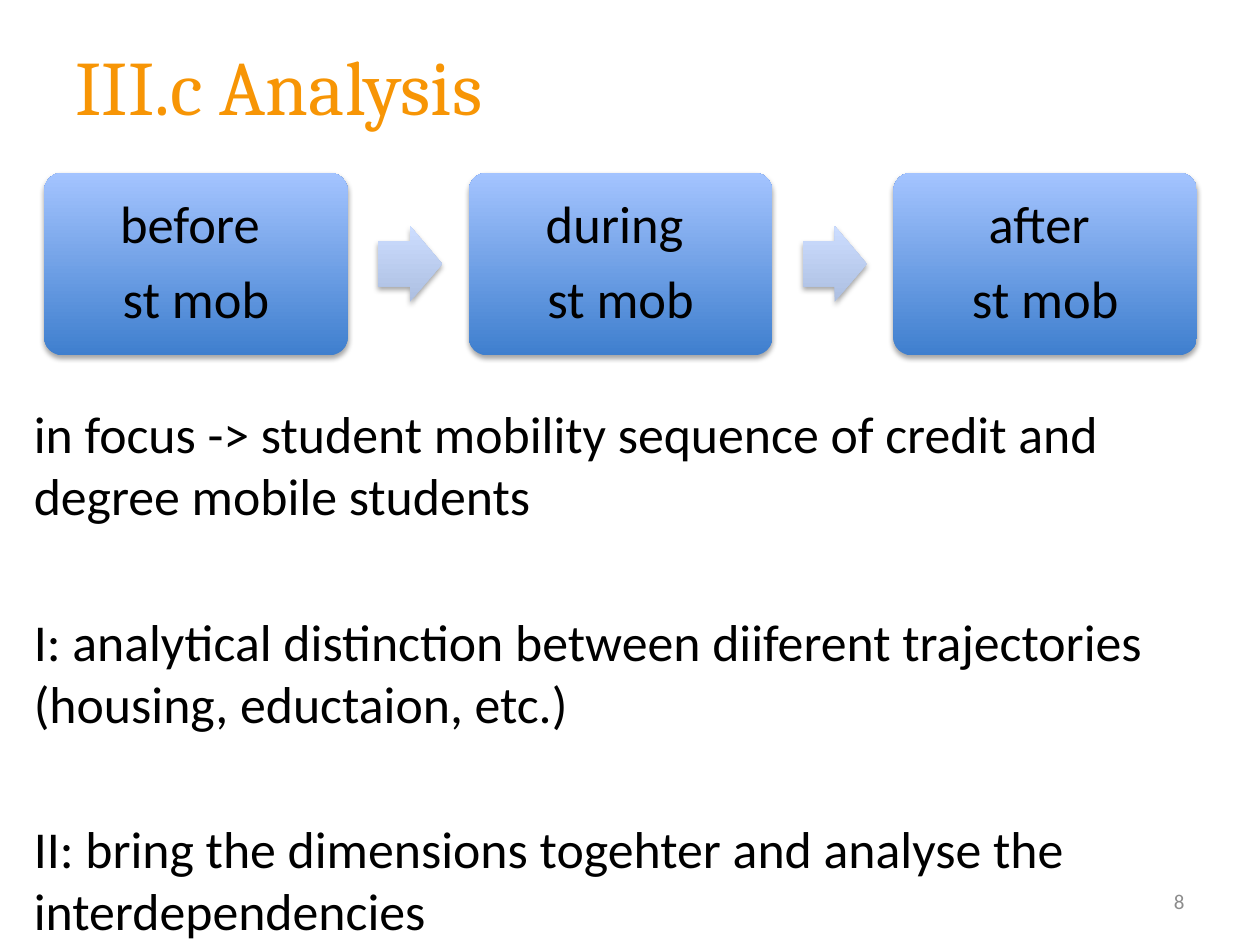
from lxml.etree import SubElement
from pptx import Presentation
from pptx.dml.color import RGBColor
from pptx.enum.shapes import MSO_SHAPE as Shape
from pptx.enum.text import MSO_ANCHOR as Anchor, PP_ALIGN as Align
from pptx.oxml.ns import qn
from pptx.util import Inches, Pt

ORANGE = RGBColor(0xF7, 0x95, 0x05)
BLACK = RGBColor(0x00, 0x00, 0x00)
GRAY = RGBColor(0x8C, 0x8C, 0x8C)
BOX_COLORS = RGBColor(0x3F, 0x7F, 0xCE), RGBColor(0xA4, 0xC4, 0xFF)
ARROW_COLORS = RGBColor(0xAD, 0xBF, 0xE1), RGBColor(0xCC, 0xDD, 0xFF)

presentation = Presentation()
presentation.slide_width = Inches(10)
presentation.slide_height = Inches(7.5)
slide = presentation.slides.add_slide(presentation.slide_layouts[6])


def add_text(paragraph, text, size, color, font_name="Calibri"):
    run = paragraph.add_run()
    run.text = text
    run.font.size = Pt(size)
    run.font.name = font_name
    run.font.color.rgb = color


def add_step_shape(kind, left, top, width, height, colors):
    shape = slide.shapes.add_shape(
        kind, Inches(left), Inches(top), Inches(width), Inches(height))
    shape.line.fill.background()
    shape.fill.gradient()
    shape.fill.gradient_angle = 90
    for stop, color in zip(shape.fill.gradient_stops, colors):
        stop.color.rgb = color
    # Soft shadow straight below
    shape.shadow.inherit = False
    effects = shape._element.spPr.find(qn("a:effectLst"))
    shadow = SubElement(effects, qn("a:outerShdw"), blurRad=str(Pt(3.1)),
                        dist=str(Pt(1.8)), dir="5400000", rotWithShape="0")
    shadow_color = SubElement(shadow, qn("a:srgbClr"), val="000000")
    SubElement(shadow_color, qn("a:alpha"), val="35000")
    return shape


# Title
title = slide.shapes.add_textbox(Inches(0.5), Inches(0.05), Inches(9.5), Inches(1.25))
title.text_frame.word_wrap = True
title.text_frame.vertical_anchor = Anchor.MIDDLE
add_text(title.text_frame.paragraphs[0], "III.c Analysis", 44, ORANGE, "Cambria")

# Slide number
number = slide.shapes.add_textbox(Inches(7.17), Inches(6.95), Inches(2.33), Inches(0.4))
number.text_frame.word_wrap = True
number.text_frame.vertical_anchor = Anchor.MIDDLE
number.text_frame.paragraphs[0].alignment = Align.RIGHT
add_text(number.text_frame.paragraphs[0], "8", 12, GRAY)

# Body statements
body = slide.shapes.add_textbox(Inches(0.17), Inches(3.14), Inches(9.33), Inches(4.01))
body_frame = body.text_frame
body_frame.word_wrap = True
statements = [
    "in focus -> student mobility sequence of credit and degree mobile students",
    "I: analytical distinction between diiferent trajectories (housing, eductaion, etc.)",
    "II: bring the dimensions togehter and analyse the interdependencies",
]
for index, statement in enumerate(statements):
    paragraph = body_frame.add_paragraph() if index else body_frame.paragraphs[0]
    paragraph.space_before = Pt(47.5 if index else 6)
    add_text(paragraph, statement, 29.6, BLACK)

# Mobility sequence: three boxes joined by block arrows
LEFT, TOP, PITCH = 0.35, 1.37, 3.37
BOX_WIDTH, BOX_HEIGHT = 2.41, 1.45
ARROW_WIDTH, ARROW_HEIGHT, ARROW_GAP = 0.51, 0.6, 0.24
phases = ["before ", "during ", "after "]
for column, phase in enumerate(phases):
    left = LEFT + column * PITCH
    box = add_step_shape(Shape.ROUNDED_RECTANGLE, left, TOP,
                         BOX_WIDTH, BOX_HEIGHT, BOX_COLORS)
    box.adjustments[0] = 0.1
    frame = box.text_frame
    frame.word_wrap = True
    frame.vertical_anchor = Anchor.MIDDLE
    frame.margin_left = frame.margin_right = Inches(0.12)
    frame.margin_top = frame.margin_bottom = Inches(0.12)
    for paragraph, line in zip((frame.paragraphs[0], frame.add_paragraph()),
                               (phase, "st mob")):
        paragraph.alignment = Align.CENTER
        paragraph.line_spacing = 0.9
        paragraph.space_after = Pt(10.5)
        add_text(paragraph, line, 30, BLACK)

    if column < len(phases) - 1:
        arrow = add_step_shape(Shape.RIGHT_ARROW, left + BOX_WIDTH + ARROW_GAP,
                               TOP + (BOX_HEIGHT - ARROW_HEIGHT) / 2,
                               ARROW_WIDTH, ARROW_HEIGHT, ARROW_COLORS)
        arrow.adjustments[0] = 0.6
        arrow.adjustments[1] = 0.5

presentation.save("out.pptx")
